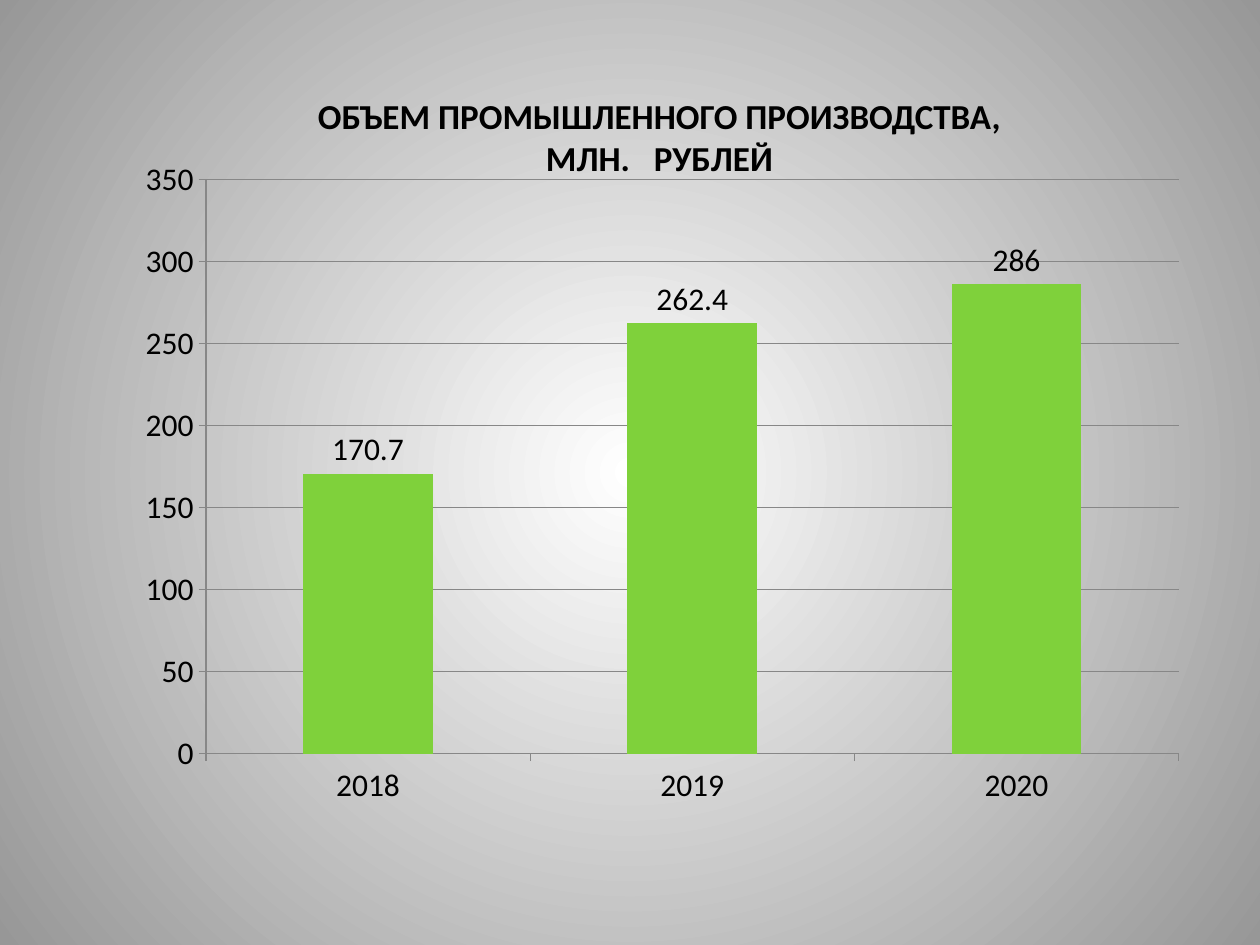
from lxml import etree
from pptx import Presentation
from pptx.chart.data import CategoryChartData
from pptx.dml.color import RGBColor as RGB
from pptx.enum.chart import XL_CHART_TYPE as CT, XL_LABEL_POSITION as LP, XL_TICK_MARK as TM
from pptx.enum.text import PP_ALIGN
from pptx.oxml import parse_xml
from pptx.oxml.ns import nsdecls, qn
from pptx.util import Pt

PX = 914400 / 126
COLORS = {"center": "FFFFFF", "edge": "979797", "text": "000000",
          "bar": "7FD13B", "axis": "878787"}


def box(*lengths):
    return [round(n * PX) for n in lengths]


def set_font(font, **values):
    for name, value in values.items():
        setattr(font, name, value)
    font.color.rgb = RGB.from_string(COLORS["text"])


prs = Presentation()
prs.slide_width, prs.slide_height = box(1260, 945)
s = prs.slides.add_slide(prs.slide_layouts[6])

# Radial background
fill = s.background.fill
fill.gradient()
for stop, name in zip(fill.gradient_stops, ("center", "edge")):
    stop.color.rgb = RGB.from_string(COLORS[name])
grad = s.element.find(".//" + qn("a:gradFill"))
for lin in grad.findall(qn("a:lin")):
    grad.remove(lin)
circle = etree.SubElement(grad, qn("a:path"), {"path": "circle"})
etree.SubElement(circle, qn("a:fillToRect"), dict.fromkeys("ltrb", "50000"))

# Heading
tf = s.shapes.add_textbox(*box(197, 88, 925, 97)).text_frame
tf.word_wrap = True
tf.text = "ОБЪЕМ ПРОМЫШЛЕННОГО ПРОИЗВОДСТВА,\nМЛН.   РУБЛЕЙ"
for p in tf.paragraphs:
    p.alignment = PP_ALIGN.CENTER
    set_font(p.runs[0].font, name="Calibri", size=Pt(20), bold=True)

# Column chart
data = CategoryChartData()
data.categories = ["2018", "2019", "2020"]
data.add_series("Series 1", [170.7, 262.4, 286])
chart = s.shapes.add_chart(CT.COLUMN_CLUSTERED, *box(59, 137, 1131, 709), data).chart
chart.has_title = chart.has_legend = False
set_font(chart.font, name="Calibri", size=Pt(18))

plot = chart.plots[0]
plot.gap_width = 150
plot.vary_by_categories = False
bars = plot.series[0].format.fill
bars.solid()
bars.fore_color.rgb = RGB.from_string(COLORS["bar"])
plot.has_data_labels = True
labels = plot.data_labels
labels.show_value = True
labels.position = LP.OUTSIDE_END

# Axes and gridlines
cat, val = chart.category_axis, chart.value_axis
val.minimum_scale, val.maximum_scale, val.major_unit = 0, 350, 50
val.has_major_gridlines = True
for axis in (cat, val):
    axis.major_tick_mark = TM.OUTSIDE
    axis.minor_tick_mark = TM.NONE
for part in (cat, val, val.major_gridlines):
    part.format.line.width = Pt(0.75)
    part.format.line.color.rgb = RGB.from_string(COLORS["axis"])

# Inner plot area as fractions of the chart
area = chart.element.find(".//" + qn("c:plotArea"))
for old in area.findall(qn("c:layout")):
    area.remove(old)
settings = {"layoutTarget": "inner", "xMode": "edge", "yMode": "edge",
            "x": 0.13, "y": 0.06, "w": 0.86, "h": 0.81}
tags = "".join(f'<c:{tag} val="{value}"/>' for tag, value in settings.items())
area.insert(0, parse_xml(
    f'<c:layout {nsdecls("c")}><c:manualLayout>{tags}</c:manualLayout></c:layout>'))

prs.save("out.pptx")
